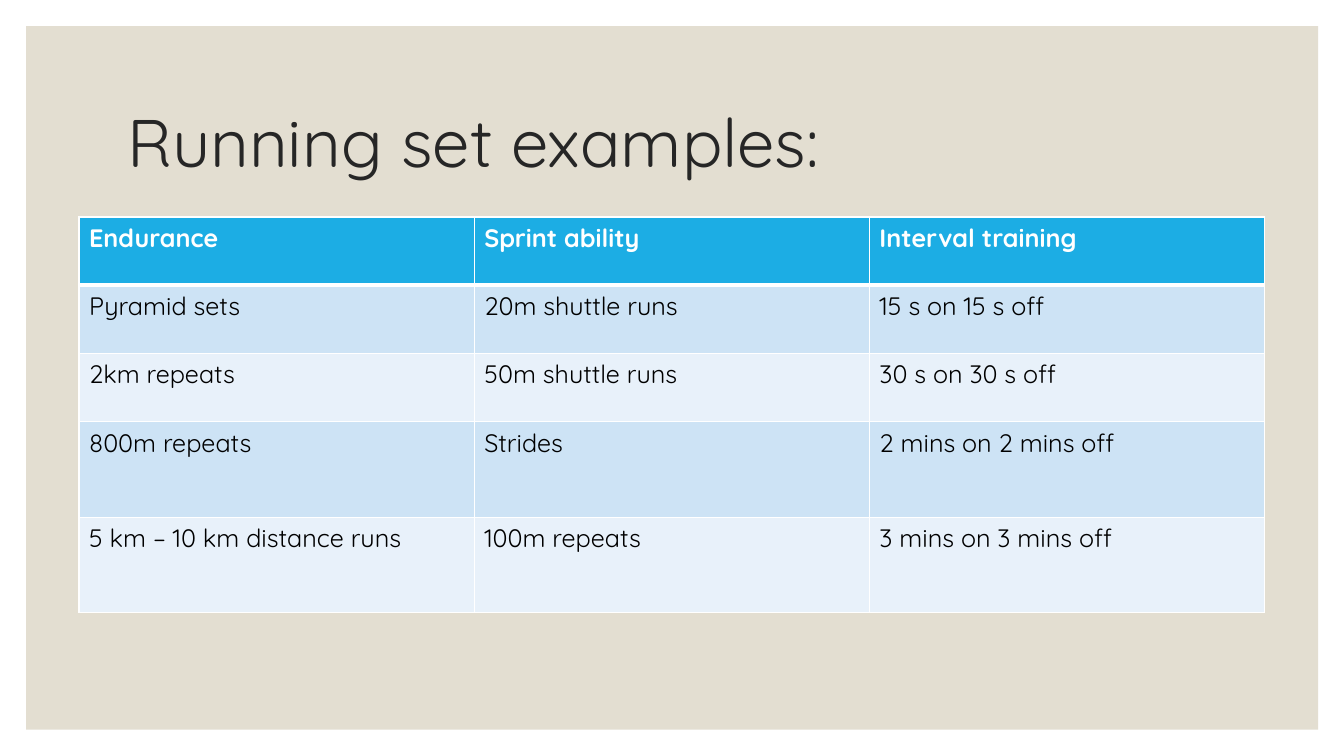
from dataclasses import dataclass

from lxml.etree import SubElement
from pptx import Presentation
from pptx.dml.color import RGBColor
from pptx.enum.shapes import MSO_SHAPE
from pptx.enum.text import MSO_ANCHOR
from pptx.oxml.ns import qn
from pptx.util import Cm, Pt


@dataclass(frozen=True)
class Theme:
    font: str = "Quicksand"
    panel: str = "E3DED1"
    title: str = "262626"
    header: str = "1CADE4"
    bands: tuple = ("CDE3F5", "E8F1FA")
    white: str = "FFFFFF"
    body: str = "000000"
    title_size: int = 48
    table_size: int = 18


theme = Theme()


def add_text(para, text, size, color, bold=False):
    span = para.add_run()
    span.text = text
    span.font.name = theme.font
    span.font.size = Pt(size)
    span.font.bold = bold
    span.font.color.rgb = RGBColor.from_string(color)


def add_border(cell, side, width):
    properties = cell._tc.get_or_add_tcPr()
    line = SubElement(properties, qn(f"a:{side}"), w=str(Pt(width)))
    fill = SubElement(line, qn("a:solidFill"))
    SubElement(fill, qn("a:srgbClr"), val=theme.white)


deck = Presentation()
deck.slide_width = Cm(33.87)
deck.slide_height = Cm(19.05)
page = deck.slides.add_slide(deck.slide_layouts[6])

panel = page.shapes.add_shape(MSO_SHAPE.RECTANGLE, Cm(0.66), Cm(0.66), Cm(32.56), Cm(17.73))
panel.shadow.inherit = False
panel.fill.solid()
panel.fill.fore_color.rgb = RGBColor.from_string(theme.panel)
panel.line.fill.background()

title_box = page.shapes.add_textbox(Cm(2.97), Cm(1.78), Cm(27.94), Cm(3.81))
title_box.text_frame.word_wrap = True
title_box.text_frame.vertical_anchor = MSO_ANCHOR.MIDDLE
title_para = title_box.text_frame.paragraphs[0]
title_para.line_spacing = 0.9
add_text(title_para, "Running set examples:", theme.title_size, theme.title)

training_sets = [
    ("Endurance", "Sprint ability", "Interval training"),
    ("Pyramid sets", "20m shuttle runs", "15 s on 15 s off"),
    ("2km repeats", "50m shuttle runs", "30 s on 30 s off"),
    ("800m repeats", "Strides", "2 mins on 2 mins off"),
    ("5 km – 10 km distance runs", "100m repeats", "3 mins on 3 mins off"),
]
row_heights = [1.72, 1.72, 1.72, 2.4, 2.4]
column_width = 9.96

table = page.shapes.add_table(
    len(training_sets), 3, Cm(1.99), Cm(5.47), Cm(3 * column_width), Cm(sum(row_heights))
).table
for column in table.columns:
    column.width = Cm(column_width)

for row_index, (labels, height) in enumerate(zip(training_sets, row_heights)):
    is_header = row_index == 0
    table.rows[row_index].height = Cm(height)
    for column_index, label in enumerate(labels):
        cell = table.cell(row_index, column_index)
        for side in ("lnL", "lnR", "lnT", "lnB"):
            header_edge = (row_index, side) in ((0, "lnB"), (1, "lnT"))
            add_border(cell, side, 3 if header_edge else 1)
        cell.fill.solid()
        cell_color = theme.header if is_header else theme.bands[(row_index - 1) % 2]
        cell.fill.fore_color.rgb = RGBColor.from_string(cell_color)
        text_color = theme.white if is_header else theme.body
        add_text(cell.text_frame.paragraphs[0], label, theme.table_size, text_color, is_header)

deck.save("out.pptx")
